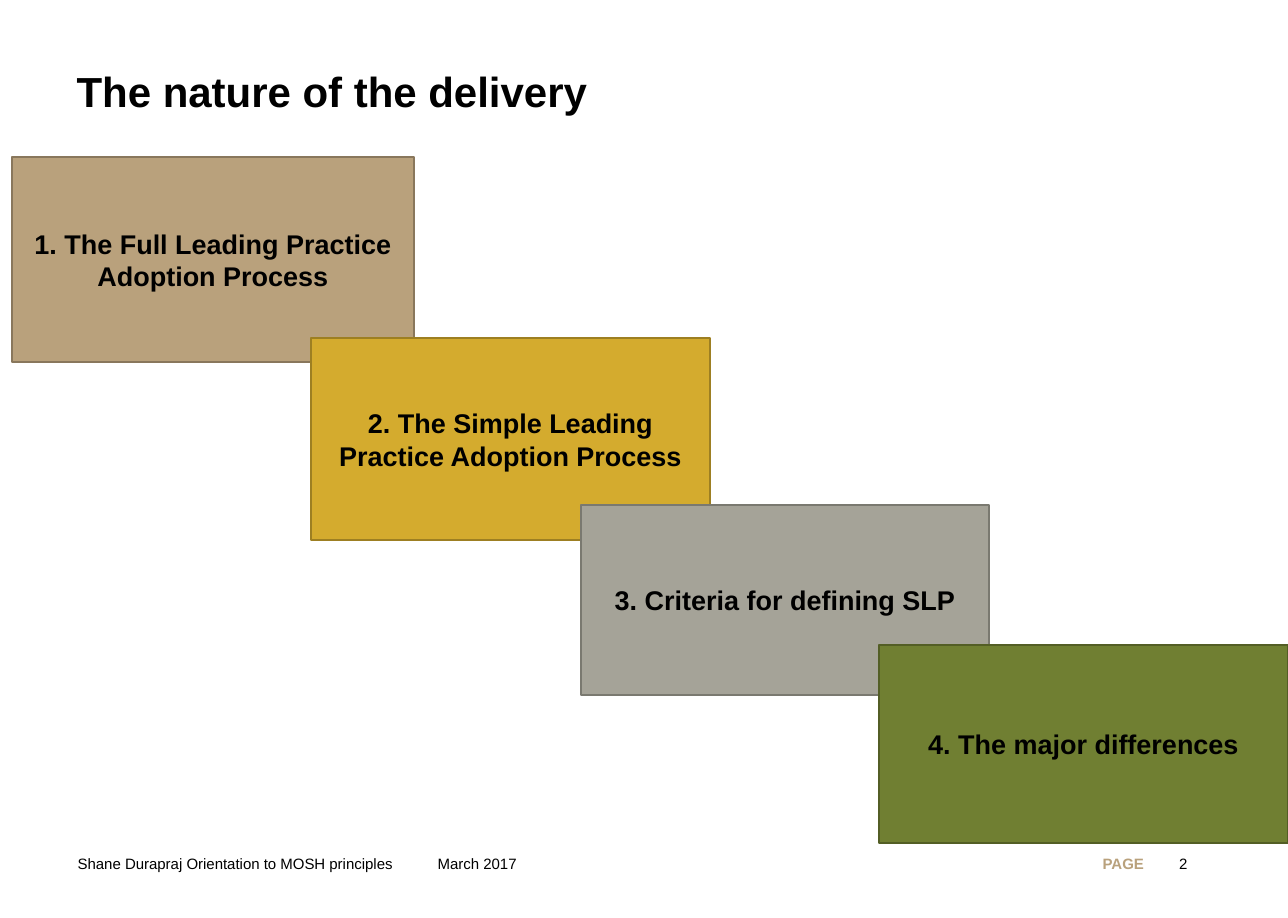
from pptx import Presentation
from pptx.dml.color import RGBColor
from pptx.enum.shapes import MSO_SHAPE
from pptx.enum.text import MSO_ANCHOR, PP_ALIGN
from pptx.util import Emu, Pt

RECTANGLE = MSO_SHAPE.RECTANGLE
TOP, MIDDLE = MSO_ANCHOR.TOP, MSO_ANCHOR.MIDDLE
LEFT, CENTER, RIGHT = PP_ALIGN.LEFT, PP_ALIGN.CENTER, PP_ALIGN.RIGHT
EMU_PER_PX = 914400 / 108

THEME = {
    "font": "Arial",
    "text": "000000",
    "tan": "B9A17C", "tan line": "89775C",
    "gold": "D4AB2E", "gold line": "9D7F22",
    "grey": "A5A398", "grey line": "7A7970",
    "green": "707F32", "green line": "535E25",
    "title size": 28, "step size": 18, "footer size": 10,
}


def px(*lengths):
    return [Emu(round(length * EMU_PER_PX)) for length in lengths]


def write(shape, text, size, color="text", bold=False, align=LEFT, anchor=TOP):
    """Fill a shape with one wrapped paragraph in the theme's type."""
    frame = shape.text_frame
    frame.word_wrap = True
    frame.vertical_anchor = anchor
    frame.text = text
    paragraph = frame.paragraphs[0]
    paragraph.alignment = align
    font = paragraph.runs[0].font
    font.name = THEME["font"]
    font.size = Pt(THEME[size])
    font.bold = bold
    font.color.rgb = RGBColor.from_string(THEME[color])
    return paragraph


prs = Presentation()
prs.slide_width, prs.slide_height = px(1288, 918)
slide = prs.slides.add_slide(prs.slide_layouts[6])
shapes = slide.shapes

page_label = shapes.add_textbox(*px(1092, 849, 65, 29))
write(page_label, "PAGE", "footer size", "tan", bold=True)
page_label.text_frame.word_wrap = False

title = shapes.add_textbox(*px(66, 12, 1156, 164))
heading = write(title, "The nature of the delivery", "title size",
                bold=True, anchor=MIDDLE)
heading.line_spacing = 0.9

footers = [
    ("March 2017", 427, 289, LEFT),
    ("Shane Durapraj Orientation to MOSH principles", 67, 435, LEFT),
    ("2", 909, 289, RIGHT),
]
for text, left, width, align in footers:
    footer = shapes.add_textbox(*px(left, 849, width, 49))
    write(footer, text, "footer size", align=align)

steps = [
    ("1. The Full Leading Practice Adoption Process", "tan", (12, 157, 402, 205)),
    ("2. The Simple Leading Practice Adoption Process", "gold", (311, 338, 399, 202)),
    ("3. Criteria for defining SLP", "grey", (581, 505, 408, 190)),
    ("4. The major differences", "green", (879, 645, 409, 198)),
]
for text, color, bounds in steps:
    step = shapes.add_shape(RECTANGLE, *px(*bounds))
    step.shadow.inherit = False
    step.fill.solid()
    step.fill.fore_color.rgb = RGBColor.from_string(THEME[color])
    step.line.color.rgb = RGBColor.from_string(THEME[color + " line"])
    step.line.width = Pt(1)
    write(step, text, "step size", bold=True, align=CENTER, anchor=MIDDLE)

prs.save("out.pptx")
